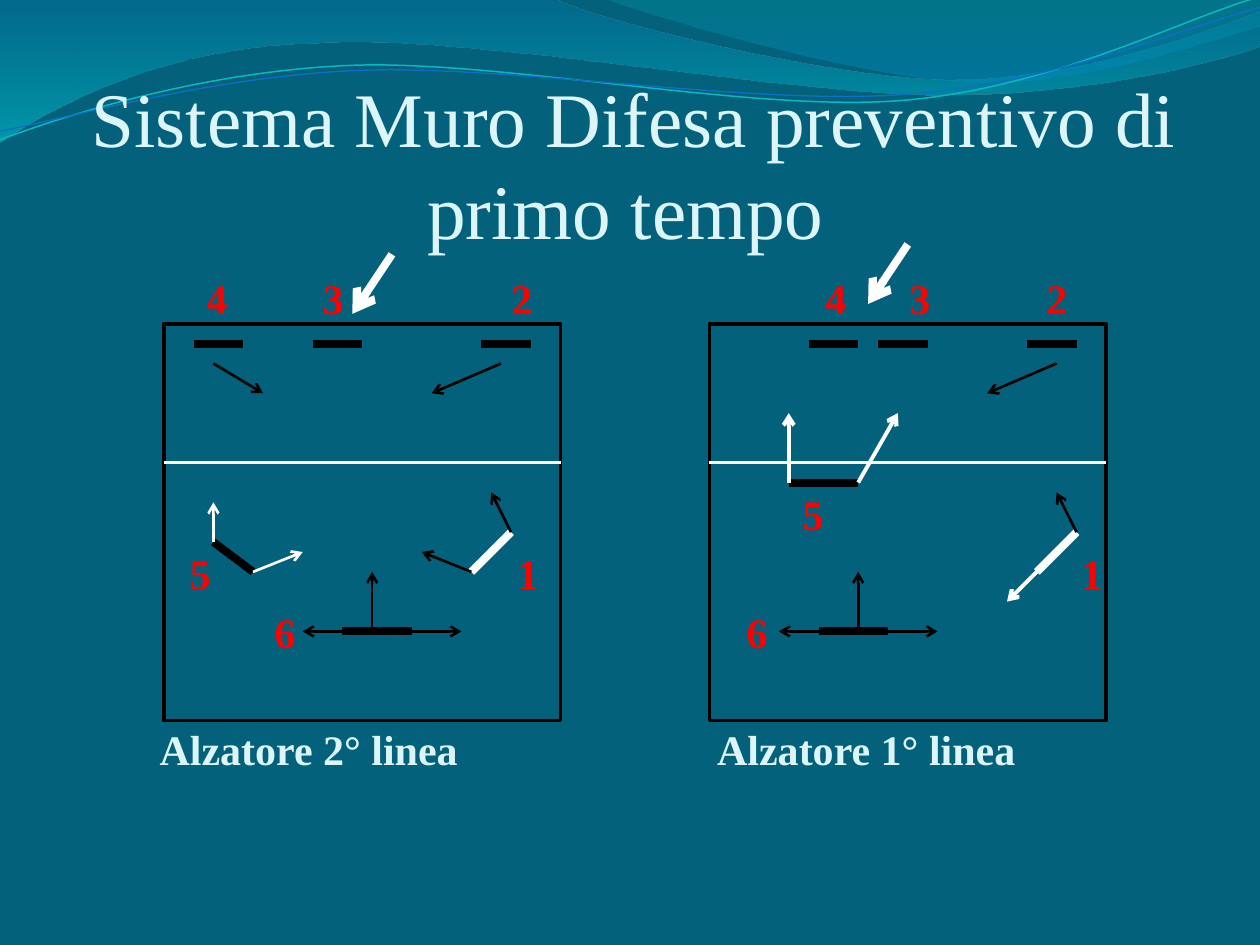
from dataclasses import dataclass

from lxml import etree
from pptx import Presentation
from pptx.dml.color import RGBColor
from pptx.enum import shapes, text
from pptx.oxml import ns
from pptx.util import Pt


@dataclass(frozen=True)
class Theme:
    background: str = "04617B"
    heading: str = "DBF5F9"
    number: str = "FF0000"
    black: str = "000000"
    white: str = "FFFFFF"
    font: str = "Times New Roman"
    title_size: float = 44.1
    body_size: float = 24


theme = Theme()
rgb = RGBColor.from_string
INCH = 72
UNIT = 28.35
COURT_TOP = 185.04
COURT_SIDE = 8 * UNIT


def add_line(slide, left, ends, color, width, arrow=False):
    x1, y1, x2, y2 = ends
    connector = slide.shapes.add_connector(
        shapes.MSO_CONNECTOR.STRAIGHT,
        Pt(left + x1 * UNIT), Pt(COURT_TOP + y1 * UNIT),
        Pt(left + x2 * UNIT), Pt(COURT_TOP + y2 * UNIT))
    connector.line.color.rgb = rgb(color)
    connector.line.width = Pt(width)
    if arrow:
        etree.SubElement(connector.line._get_or_add_ln(), ns.qn("a:tailEnd"), type="arrow")
    etree.SubElement(connector._element.spPr, ns.qn("a:effectLst"))


def write_text(shape, box, content, size, color, bold, alignment):
    shape.left, shape.top, shape.width, shape.height = map(Pt, box)
    frame = shape.text_frame
    frame.word_wrap = True
    frame.auto_size = text.MSO_AUTO_SIZE.NONE
    frame.margin_left = frame.margin_right = frame.margin_top = frame.margin_bottom = 0
    paragraph = frame.paragraphs[0]
    paragraph.text = content
    paragraph.alignment = alignment
    paragraph.space_before = 0
    paragraph.font.name = theme.font
    paragraph.font.size = Pt(size)
    paragraph.font.bold = bold
    paragraph.font.color.rgb = rgb(color)


presentation = Presentation()
presentation.slide_width, presentation.slide_height = Pt(720), Pt(540)
slide = presentation.slides.add_slide(presentation.slide_layouts[3])
slide.background.fill.solid()
slide.background.fill.fore_color.rgb = rgb(theme.background)

waves = [
    ([(0, 0)],
     [[(4.4, -0.01)], [(4.76, 0.17), (6.64, 0.63), (7.58, 0.63)], [(8.53, 0.63), (9.58, 0.26), (10, 0.09)],
      [(10.01, 0.36)], [(9.83, 0.44), (8.7, 0.76), (7.46, 0.75)], [(6.22, 0.75), (3.82, 0.28), (2.57, 0.34)],
      [(1.29, 0.36), (0.46, 0.83), (-0.01, 1.13)], [(0, 0)]],
     [(0, "0074A1", 45), (1, "00C6CF", 55)], None),
    ([(4.79, -0.01)],
     [[(5.09, 0.11), (6.82, 0.62), (7.69, 0.65)], [(8.56, 0.69), (9.61, 0.32), (10, 0.21)],
      [(10, 0)], [(4.79, -0.01)]],
     [(0, "00A1A9", 30), (0.8, "008BBF", 45)], None),
    ([(0, 1.11)],
     [[(0.48, 0.93), (1.58, 0.57), (2.77, 0.52)], [(3.95, 0.47), (5.93, 0.89), (7.13, 0.8)],
      [(8.33, 0.71), (9.38, 0.15), (9.98, -0.02)]], None, ("0AB8BF", 0.85)),
    ([(0, 1.04)],
     [[(0.47, 0.96), (1.64, 0.61), (2.83, 0.56)], [(4.03, 0.51), (5.97, 0.84), (7.17, 0.75)],
      [(8.36, 0.67), (9.41, 0.21), (10, 0.06)]], None, ("0F6FC6", 0.75)),
]
for start, segments, stops, outline in waves:
    points = [(Pt(x * INCH), Pt(y * INCH)) for segment in [start] + segments for x, y in segment]
    builder = slide.shapes.build_freeform(*points[0])
    builder.add_line_segments(points[1:], close=bool(stops))
    wave = builder.convert_to_shape()
    wave.shadow.inherit = False
    steps = iter(wave._element.findall(".//" + ns.qn("a:lnTo")))
    for segment in segments:
        parts = [next(steps) for _ in segment]
        if len(parts) == 3:
            curve = etree.Element(ns.qn("a:cubicBezTo"))
            parts[0].addprevious(curve)
            for part in parts:
                curve.append(part[0])
                part.getparent().remove(part)
    if outline:
        color, width = outline
        wave.fill.background()
        wave.line.color.rgb = rgb(color)
        wave.line.width = Pt(width)
        continue
    wave.line.fill.background()
    wave.fill.gradient()
    wave.fill.gradient_angle = 270
    for stop, (position, color, _) in zip(wave.fill.gradient_stops, stops):
        stop.position = position
        stop.color.rgb = rgb(color)
    gradient_colors = wave._element.spPr.findall(".//" + ns.qn("a:gs") + "/" + ns.qn("a:srgbClr"))
    for element, (_, _, opacity) in zip(gradient_colors, stops):
        etree.SubElement(element, ns.qn("a:alpha"), val=str(opacity * 1000))

title = slide.shapes.title
slide.shapes._spTree.append(title._element)
write_text(title, (31, 37.4, 653, 108.4), "Sistema Muro Difesa preventivo di primo tempo",
           theme.title_size, theme.heading, False, text.PP_ALIGN.CENTER)
title.text_frame.vertical_anchor = text.MSO_ANCHOR.BOTTOM
title.text_frame.paragraphs[0]._p.get_or_add_pPr().set("indent", str(Pt(10)))

captions = [(1, 91.2, "Alzatore 2° linea"), (2, 409.8, "Alzatore 1° linea")]
for index, left, caption in captions:
    body = slide.placeholders[index]
    slide.shapes._spTree.append(body._element)
    properties = body.text_frame.paragraphs[0]._p.get_or_add_pPr()
    properties.set("marL", "0")
    properties.set("indent", "0")
    etree.SubElement(properties, ns.qn("a:buNone"))
    write_text(body, (left, 413.5, 200, 30), caption,
               theme.body_size, theme.heading, True, text.PP_ALIGN.LEFT)

number_rows = [
    (155.8, [(124, "4"), (190.3, "3"), (298.3, "2"), (477.7, "4"), (525.7, "3"), (604, "2")]),
    (279.3, [(464.6, "5")]),
    (313, [(114.3, "5"), (301.7, "1"), (624, "1")]),
    (346.7, [(162.9, "6"), (432.6, "6")]),
]
for top, numbers in number_rows:
    for center, number in numbers:
        label = slide.shapes.add_textbox(0, 0, 0, 0)
        write_text(label, (center - 12, top, 24, 30), number,
                   theme.body_size, theme.number, True, text.PP_ALIGN.CENTER)

courts = [
    (93.6,
     [(3, 0.4, 4, 0.4), (0.6, 0.4, 1.6, 0.4), (6.4, 0.4, 7.4, 0.4), (1, 4.4, 1.8, 5), (3.6, 6.2, 5, 6.2)],
     (6.2, 5, 7, 4.2),
     [(3.6, 6.2, 2.8, 6.2), (5, 6.2, 6, 6.2), (4.2, 6.2, 4.2, 5), (7, 4.2, 6.6, 3.4),
      (6.2, 5, 5.2, 4.6), (1, 0.8, 2, 1.4), (6.8, 0.8, 5.4, 1.4)],
     [(1, 4.4, 1, 3.6), (1.8, 5, 2.8, 4.6)], 1.5,
     (4.6, -1.4, 3.8, -0.2)),
    (405.36,
     [(2, 0.4, 3, 0.4), (3.4, 0.4, 4.4, 0.4), (6.4, 0.4, 7.4, 0.4), (1.6, 3.2, 3, 3.2), (2.2, 6.2, 3.6, 6.2)],
     (6.6, 5, 7.4, 4.2),
     [(7, 0.8, 5.6, 1.4), (3, 6.2, 3, 5), (3.6, 6.2, 4.6, 6.2), (2.2, 6.2, 1.4, 6.2), (7.4, 4.2, 7, 3.4)],
     [(1.6, 3.2, 1.6, 1.8), (3, 3.2, 3.8, 1.8), (6.8, 4.8, 6, 5.6)], 2.25,
     (4, -1.6, 3.2, -0.4)),
]
for left, players, defender, black_moves, white_moves, white_width, attack in courts:
    court = slide.shapes.add_shape(shapes.MSO_SHAPE.RECTANGLE, Pt(left), Pt(COURT_TOP),
                                   Pt(COURT_SIDE), Pt(COURT_SIDE))
    court.shadow.inherit = False
    court.fill.background()
    court.line.color.rgb = rgb(theme.black)
    court.line.width = Pt(2)
    add_line(slide, left, (0, 2.8, 8, 2.8), theme.white, 1.5)
    for player in players:
        add_line(slide, left, player, theme.black, 4.5)
    add_line(slide, left, defender, theme.white, 4.5)
    for move in black_moves:
        add_line(slide, left, move, theme.black, 1.5, arrow=True)
    for move in white_moves:
        add_line(slide, left, move, theme.white, white_width, arrow=True)
    add_line(slide, left, attack, theme.white, 4.5, arrow=True)

presentation.save("out.pptx")
